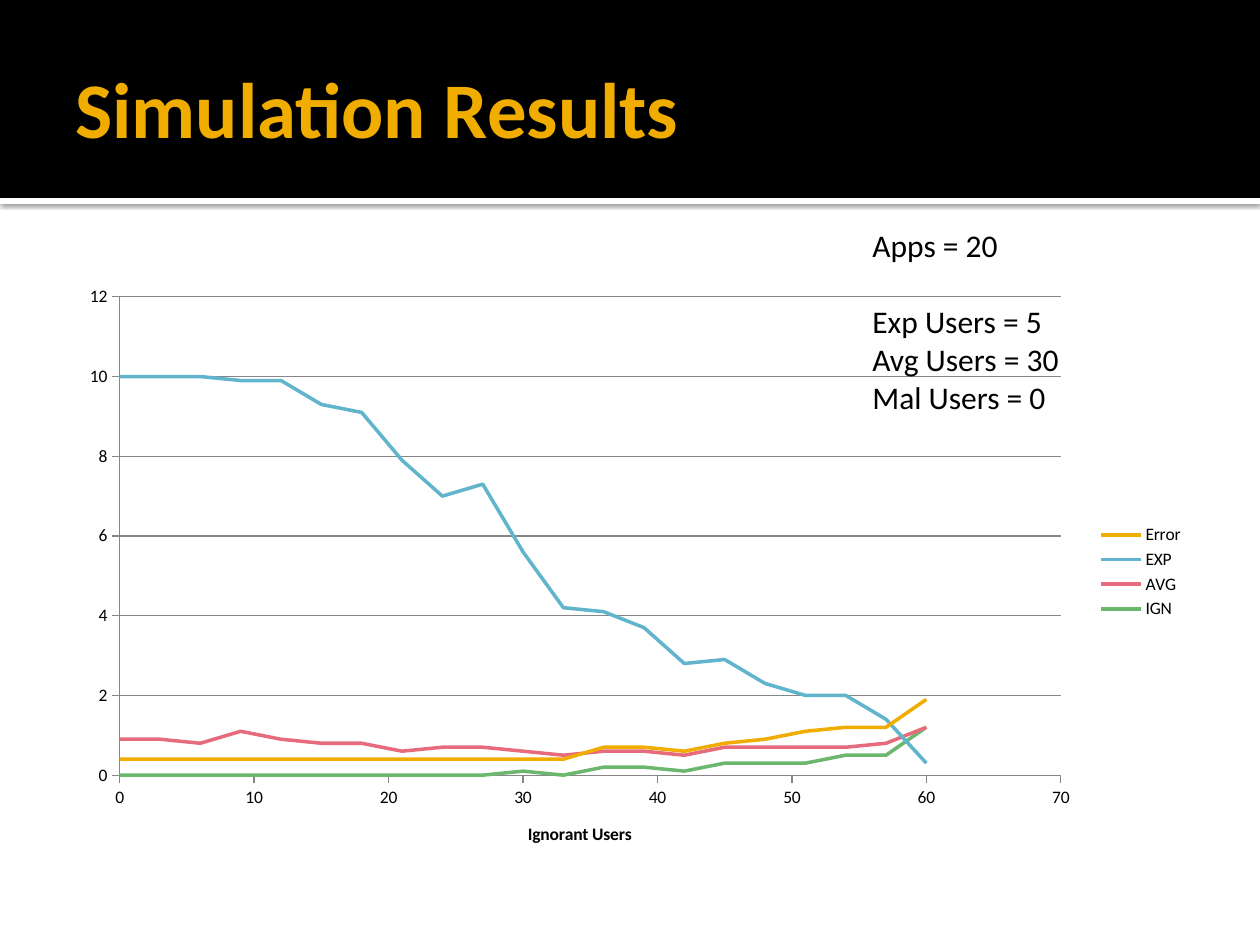
from dataclasses import dataclass
from typing import NamedTuple

from lxml.etree import SubElement
from pptx import Presentation
from pptx.chart.data import XyChartData
from pptx.dml.color import RGBColor
from pptx.enum.chart import XL_CHART_TYPE as ChartType
from pptx.enum.chart import XL_LEGEND_POSITION as LegendPosition
from pptx.enum.chart import XL_TICK_MARK as TickMark
from pptx.enum.shapes import MSO_SHAPE as Preset
from pptx.enum.text import MSO_ANCHOR as Anchor
from pptx.oxml import parse_xml
from pptx.oxml.ns import nsdecls, qn
from pptx.util import Emu, Pt

EMU_PER_PX = 914400 / 126


@dataclass(frozen=True)
class Theme:
    font: str = "Calibri"
    gold: str = "F0AD00"
    blue: str = "60B5CC"
    rose: str = "E66C7D"
    green: str = "6BB76D"
    black: str = "000000"
    white: str = "FFFFFF"
    grid: str = "868686"
    title_size: int = 45
    note_size: int = 18
    chart_size: int = 10
    curve_width: float = 2
    grid_width: float = 0.75


THEME = Theme()


class Box(NamedTuple):
    left: int
    top: int
    width: int
    height: int

    def emu(self) -> list[Emu]:
        return [px(length) for length in self]


class Line(NamedTuple):
    text: str
    space_before: int = 0


class Curve(NamedTuple):
    name: str
    color: str
    values: list[float]


IGNORANT_USERS = range(0, 61, 3)
CURVES = [
    Curve("Error", THEME.gold, [0.4] * 12 + [0.7, 0.7, 0.6, 0.8, 0.9, 1.1, 1.2, 1.2, 1.9]),
    Curve("EXP", THEME.blue, [10, 10, 10, 9.9, 9.9, 9.3, 9.1, 7.9, 7, 7.3, 5.6,
                              4.2, 4.1, 3.7, 2.8, 2.9, 2.3, 2, 2, 1.4, 0.3]),
    Curve("AVG", THEME.rose, [0.9, 0.9, 0.8, 1.1, 0.9, 0.8, 0.8, 0.6, 0.7, 0.7, 0.6,
                              0.5, 0.6, 0.6, 0.5, 0.7, 0.7, 0.7, 0.7, 0.8, 1.2]),
    Curve("IGN", THEME.green, [0] * 10 + [0.1, 0, 0.2, 0.2, 0.1, 0.3, 0.3, 0.3, 0.5, 0.5, 1.2]),
]
SETTINGS = [
    Line("Apps = 20"),
    Line("Exp Users = 5", space_before=22),
    Line("Avg Users = 30"),
    Line("Mal Users = 0"),
]


def px(length: int) -> Emu:
    return Emu(round(length * EMU_PER_PX))


def rgb(color: str) -> RGBColor:
    return RGBColor.from_string(color)


def style_font(font, size: int, color: str, bold: bool = False) -> None:
    font.name, font.size, font.bold = THEME.font, Pt(size), bold
    font.color.rgb = rgb(color)


def style_line(line, color: str, width: float) -> None:
    line.color.rgb = rgb(color)
    line.width = Pt(width)


def add_band(slide, box: Box, color: str):
    band = slide.shapes.add_shape(Preset.RECTANGLE, *box.emu())
    band.shadow.inherit = False
    band.fill.solid()
    band.fill.fore_color.rgb = rgb(color)
    band.line.fill.background()
    return band


def drop_shadow(band) -> None:
    effects = band._element.spPr.find(qn("a:effectLst"))
    effects.append(parse_xml(
        f'<a:outerShdw {nsdecls("a")} blurRad="31750" dist="10160" dir="5400000" '
        f'algn="tl" rotWithShape="0"><a:srgbClr val="{THEME.black}">'
        '<a:alpha val="60000"/></a:srgbClr></a:outerShdw>'))


def add_lines(slide, box: Box, lines: list[Line], size: int, color: str,
              bold: bool = False, anchor: Anchor = Anchor.TOP) -> None:
    frame = slide.shapes.add_textbox(*box.emu()).text_frame
    frame.word_wrap = True
    frame.vertical_anchor = anchor
    frame.text = "\n".join(line.text for line in lines)
    for paragraph, line in zip(frame.paragraphs, lines):
        paragraph.space_before = Pt(line.space_before)
        style_font(paragraph.runs[0].font, size, color, bold)


def style_axis(axis, maximum: int, step: int) -> None:
    axis.minimum_scale, axis.maximum_scale, axis.major_unit = 0, maximum, step
    axis.major_tick_mark, axis.minor_tick_mark = TickMark.OUTSIDE, TickMark.NONE
    axis.tick_labels.number_format = "General"
    axis.tick_labels.number_format_is_linked = False
    style_line(axis.format.line, THEME.grid, THEME.grid_width)


def place_plot(chart, **fractions: float) -> None:
    plot_area = chart._chartSpace.chart.plotArea
    for old in plot_area.findall(qn("c:layout")):
        plot_area.remove(old)
    layout = parse_xml(f'<c:layout {nsdecls("c")}/>')
    manual = SubElement(layout, qn("c:manualLayout"))
    settings = {"layoutTarget": "inner", "xMode": "edge", "yMode": "edge", **fractions}
    for tag, value in settings.items():
        SubElement(manual, qn(f"c:{tag}")).set("val", str(value))
    plot_area.insert(0, layout)


def add_results_chart(slide, box: Box) -> None:
    results = XyChartData()
    for curve in CURVES:
        series = results.add_series(curve.name)
        for users, value in zip(IGNORANT_USERS, curve.values):
            series.add_data_point(users, value)
    chart = slide.shapes.add_chart(
        ChartType.XY_SCATTER_LINES_NO_MARKERS, *box.emu(), results).chart
    style_font(chart.font, THEME.chart_size, THEME.black)
    chart.has_title = False
    chart.plots[0].vary_by_categories = False
    place_plot(chart, x=0.05, y=0.04, w=0.83, h=0.8)

    # Axes and legend
    users_axis, value_axis = chart.category_axis, chart.value_axis
    style_axis(users_axis, maximum=70, step=10)
    style_axis(value_axis, maximum=12, step=2)
    users_axis.has_major_gridlines = False
    value_axis.has_major_gridlines = True
    style_line(value_axis.major_gridlines.format.line, THEME.grid, THEME.grid_width)
    caption = users_axis.axis_title.text_frame
    caption.text = "Ignorant Users"
    style_font(caption.paragraphs[0].runs[0].font, THEME.chart_size, THEME.black, bold=True)
    chart.has_legend = True
    chart.legend.position = LegendPosition.RIGHT
    chart.legend.include_in_layout = False

    # Curves
    for series, curve in zip(chart.plots[0].series, CURVES):
        series.smooth = False
        style_line(series.format.line, curve.color, THEME.curve_width)


def main() -> None:
    presentation = Presentation()
    presentation.slide_width, presentation.slide_height = px(1260), px(945)
    slide = presentation.slides.add_slide(presentation.slide_layouts[6])

    # Header
    drop_shadow(add_band(slide, Box(0, 198, 1260, 6), THEME.white))
    add_band(slide, Box(0, 0, 1260, 198), THEME.black)
    add_lines(slide, Box(63, 21, 1134, 173), [Line("Simulation Results")],
              THEME.title_size, THEME.gold, bold=True, anchor=Anchor.MIDDLE)

    # Results and the settings behind them
    add_results_chart(slide, Box(63, 273, 1134, 598))
    add_lines(slide, Box(860, 220, 242, 199), SETTINGS, THEME.note_size, THEME.black)

    presentation.save("out.pptx")


if __name__ == "__main__":
    main()
